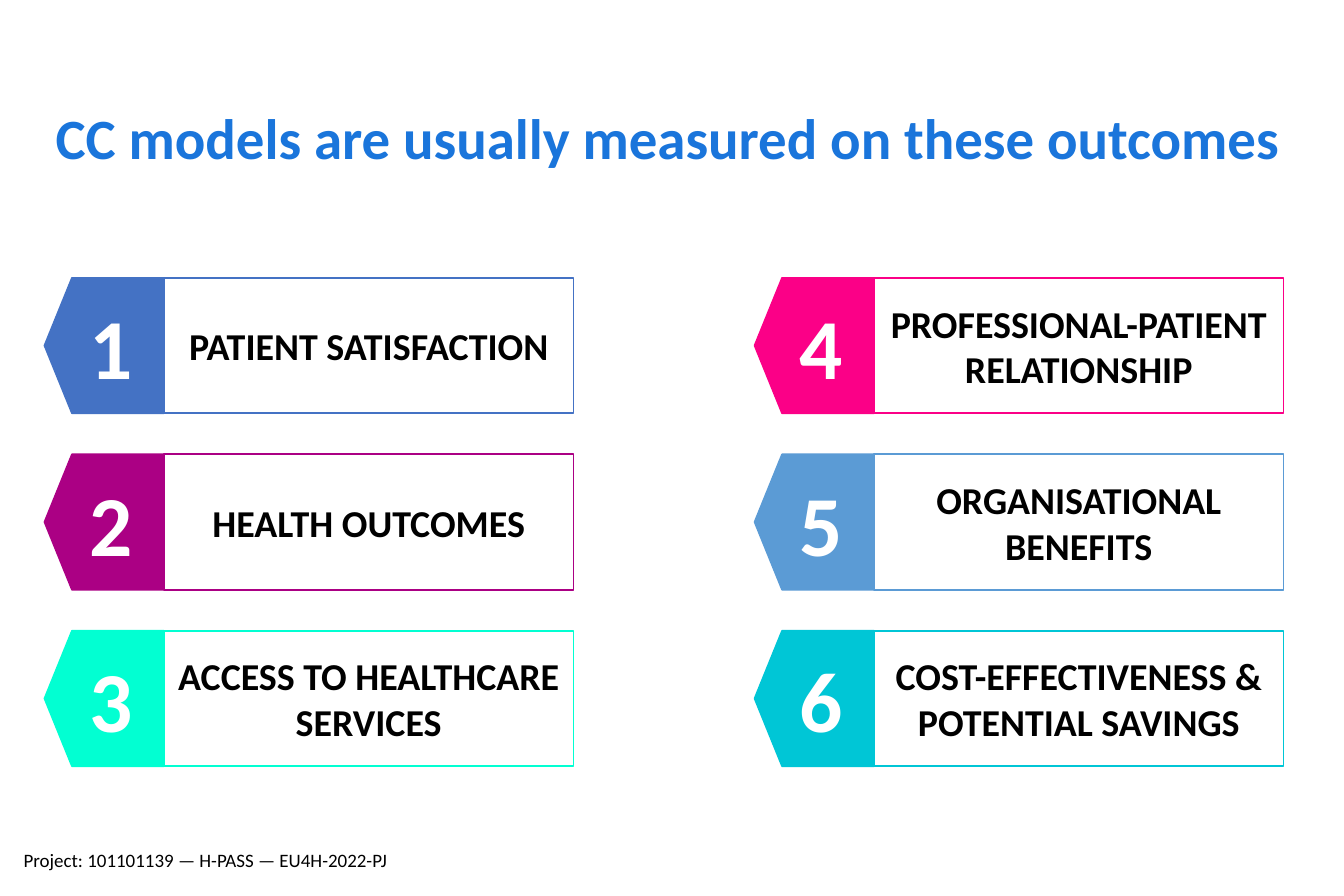
from dataclasses import dataclass

from pptx import Presentation
from pptx.dml.color import RGBColor
from pptx.enum.shapes import MSO_SHAPE as SHAPE
from pptx.enum.text import MSO_ANCHOR as ANCHOR, PP_ALIGN as ALIGN
from pptx.util import Pt

PX = 9144


@dataclass(frozen=True)
class Theme:
    """Colours, font and type sizes of the slide."""
    font: str = "Calibri"
    title: str = "1A75DB"
    ink: str = "000000"
    paper: str = "FFFFFF"
    accents: tuple = ("4472C4", "AB0084", "02FFD2", "FB0087", "5B9BD5", "00C6D6")
    title_size: int = 36
    number_size: int = 54
    label_size: int = 24
    footer_size: int = 12


THEME = Theme()
OUTCOMES = (
    "PATIENT SATISFACTION",
    "HEALTH OUTCOMES",
    "ACCESS TO HEALTHCARE SERVICES",
    "PROFESSIONAL-PATIENT RELATIONSHIP",
    "ORGANISATIONAL BENEFITS",
    "COST-EFFECTIVENESS & POTENTIAL SAVINGS",
)


def emu(*lengths):
    """Turn px lengths into EMU."""
    return [n * PX for n in lengths]


def write(s, text, size, color, bold=True, align=ALIGN.CENTER, anchor=ANCHOR.MIDDLE):
    """Put one styled paragraph into a shape and return it."""
    tf = s.text_frame
    tf.word_wrap = True
    tf.vertical_anchor = anchor
    p = tf.paragraphs[0]
    p.text = text
    p.alignment = align
    p.font.name = THEME.font
    p.font.size = Pt(size)
    p.font.bold = bold
    p.font.color.rgb = RGBColor.from_string(color)
    return p


def add_block(shapes, kind, box, line, fill=None):
    """Add an outlined shape, filled only when a fill is given."""
    s = shapes.add_shape(kind, *emu(*box))
    s.shadow.inherit = False
    s.line.color.rgb = RGBColor.from_string(line)
    s.line.width = Pt(1)
    if fill:
        s.fill.solid()
        s.fill.fore_color.rgb = RGBColor.from_string(fill)
    else:
        s.fill.background()
    return s


def add_title(slide, box):
    """Add the slide heading."""
    s = slide.shapes.add_textbox(*emu(*box))
    p = write(s, "CC models are usually measured on these outcomes", THEME.title_size,
              THEME.title, align=ALIGN.LEFT, anchor=ANCHOR.BOTTOM)
    p.line_spacing = 0.9


def add_outcome(slide, box, number, label, color):
    """Add a numbered tag pointing left with its label box, as one group."""
    x, y, w, h = box
    tag_w = 105
    group = slide.shapes.add_group_shape()
    group.name = f"Outcome {number}"
    tag = add_block(group.shapes, SHAPE.PENTAGON, (x, y, tag_w, h), color, color)
    tag.adjustments[0] = 0.23
    tag.rotation = 180
    tag._element.spPr.get_or_add_xfrm().set("flipV", "1")
    write(tag, str(number), THEME.number_size, THEME.paper)
    frame = add_block(group.shapes, SHAPE.RECTANGLE, (x + tag_w, y, w - tag_w, h), color)
    write(frame, label, THEME.label_size, THEME.ink)


def add_outcomes(slide, box):
    """Lay the outcomes out in two columns of three, filled downwards."""
    x, y, w, h = box
    rows, item_w, item_h = 3, 465, 119
    step_x, step_y = w - item_w, (h - item_h) // (rows - 1)
    for i, (label, color) in enumerate(zip(OUTCOMES, THEME.accents)):
        col, row = divmod(i, rows)
        place = (x + col * step_x, y + row * step_y, item_w, item_h)
        add_outcome(slide, place, i + 1, label, color)


def add_footer(slide, box):
    """Add the project reference."""
    s = slide.shapes.add_textbox(*emu(*box))
    write(s, "Project: 101101139 — H-PASS — EU4H-2022-PJ", THEME.footer_size,
          THEME.ink, bold=False, align=ALIGN.LEFT, anchor=ANCHOR.TOP)


def main():
    """Build and save the slide."""
    prs = Presentation()
    prs.slide_width, prs.slide_height = emu(1181, 787)
    slide = prs.slides.add_slide(prs.slide_layouts[6])
    add_title(slide, (39, 71, 1115, 85))
    add_outcomes(slide, (39, 244, 1089, 429))
    add_footer(slide, (11, 740, 363, 27))
    prs.save("out.pptx")


if __name__ == "__main__":
    main()
